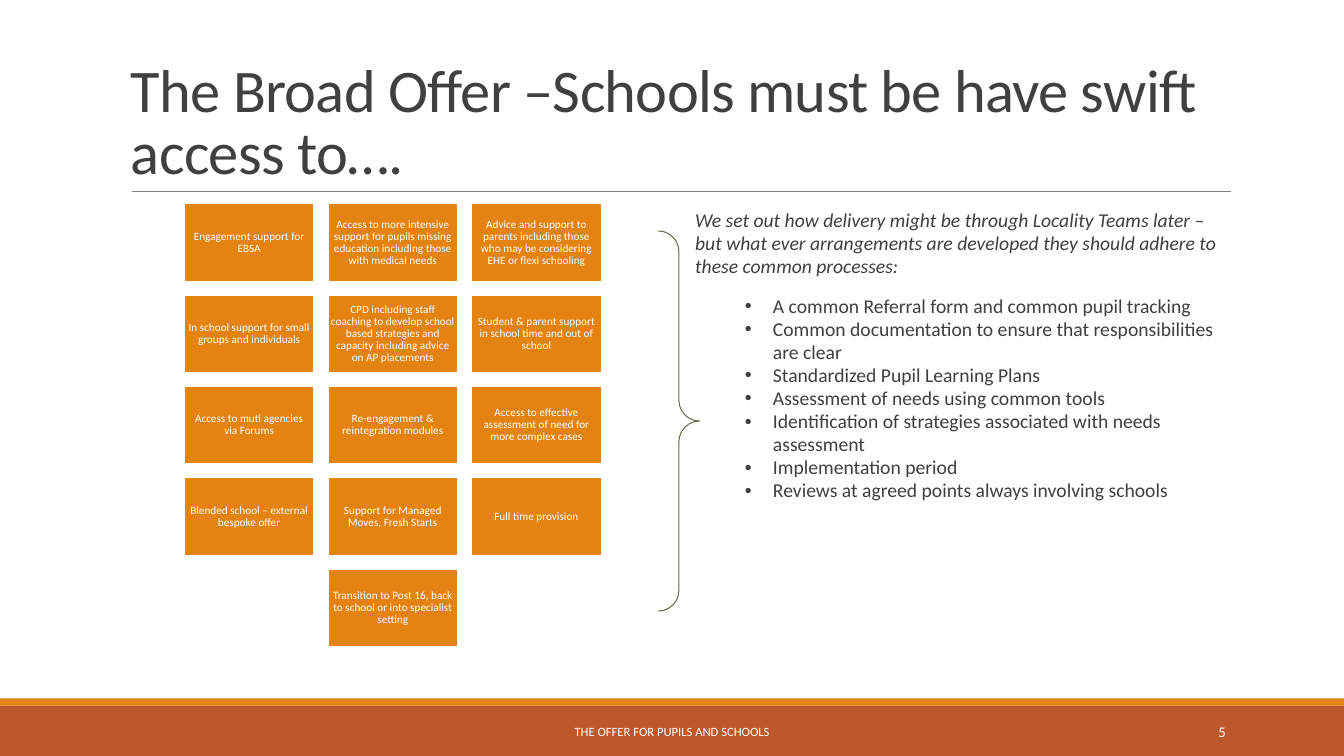
import pptx
import pptx.util
import pptx.dml.color
import pptx.enum.shapes
import pptx.enum.text
import pptx.oxml.xmlchemy

Cm, Pt = pptx.util.Cm, pptx.util.Pt
Kind = pptx.enum.shapes.MSO_SHAPE
Align = pptx.enum.text.PP_ALIGN
Anchor = pptx.enum.text.MSO_ANCHOR
Node = pptx.oxml.xmlchemy.OxmlElement


def paint(color, code):
    color.rgb = pptx.dml.color.RGBColor.from_string(code)


def write(frame, lines, code, anchor, inset, font, para):
    frame.word_wrap = True
    frame.vertical_anchor = anchor
    sides = ("margin_left", "margin_top", "margin_right", "margin_bottom")
    for side, gap in zip(sides, inset):
        setattr(frame, side, Cm(gap))
    for n, line in enumerate(lines):
        par = frame.paragraphs[0] if n == 0 else frame.add_paragraph()
        for key, val in para.items():
            setattr(par, key, val)
        run = par.add_run()
        run.text = line
        for key, val in {"name": "Calibri", **font}.items():
            setattr(run.font, key, val)
        paint(run.font.color, code)
    return frame.paragraphs


deck = pptx.Presentation()
deck.slide_width, deck.slide_height = Cm(33.87), Cm(19.05)
slide = deck.slides.add_slide(deck.slide_layouts[6])
shapes = slide.shapes

# Footer bars
for top, tall, code in ((17.78, 1.27, "BD582C"), (17.6, 0.18, "E48312")):
    bar = shapes.add_shape(Kind.RECTANGLE, 0, Cm(top), deck.slide_width, Cm(tall))
    bar.shadow.inherit = False
    bar.fill.solid()
    paint(bar.fill.fore_color, code)
    bar.line.fill.background()

# Title and rule
rule = shapes.add_connector(pptx.enum.shapes.MSO_CONNECTOR.STRAIGHT,
                            Cm(3.33), Cm(4.82), Cm(31.01), Cm(4.82))
rule.line.width = Pt(0.5)
paint(rule.line.color, "808080")
rule._element.spPr.append(Node("a:effectLst"))

title = shapes.add_textbox(Cm(3.05), Cm(0.8), Cm(27.94), Cm(4.03))
head = write(title.text_frame,
             ["The Broad Offer –Schools must be have swift access to…."],
             "404040", Anchor.BOTTOM, (0.25, 0.13, 0.25, 0.13),
             {"size": Pt(43.2)}, {"line_spacing": 0.85})
head[0].runs[0]._r.get_or_add_rPr().set("spc", "-50")

# Grid of offers, a short last row is centred
offers = [
    "Engagement support for EBSA",
    "Access to more intensive support for pupils missing education including those with medical needs",
    "Advice and support to parents including those who may be considering EHE or flexi schooling",
    "In school support for small groups and individuals",
    "CPD including staff coaching to develop school based strategies and capacity including advice on AP placements",
    "Student & parent support in school time and out of school",
    "Access to muti agencies via Forums",
    "Re-engagement & reintegration modules",
    "Access to effective assessment of need for more complex cases",
    "Blended school – external bespoke offer",
    "Support for Managed Moves, Fresh Starts",
    "Full time provision",
    "Transition to Post 16, back to school or into specialist setting",
]
cols = 3
for n, offer in enumerate(offers):
    row, col = divmod(n, cols)
    count = min(cols, len(offers) - row * cols)
    left = 4.64 + 3.62 * (col + (cols - count) / 2)
    box = shapes.add_shape(Kind.RECTANGLE, Cm(left), Cm(5.13 + 2.3 * row),
                           Cm(3.28), Cm(1.97))
    box.shadow.inherit = False
    box.fill.solid()
    paint(box.fill.fore_color, "E48312")
    box.line.width = Pt(1.25)
    paint(box.line.color, "FFFFFF")
    write(box.text_frame, [offer], "FFFFFF", Anchor.MIDDLE, [0.08] * 4,
          {"size": Pt(8)}, {"alignment": Align.CENTER, "line_spacing": 0.9})

# Common processes
body = shapes.add_textbox(Cm(17.27), Cm(5.13), Cm(13.72), Cm(11.18))
steps = [
    "We set out how delivery might be through Locality Teams later – but what ever arrangements are developed they should adhere to these common processes:",
    "A common Referral form and common pupil tracking",
    "Common documentation to ensure that responsibilities are clear",
    "Standardized Pupil Learning Plans",
    "Assessment of needs using common tools",
    "Identification of strategies associated with needs assessment",
    "Implementation period",
    "Reviews at agreed points always involving schools",
]
intro, *items = write(body.text_frame, steps, "3F3F3F", Anchor.TOP,
                      (0, 0.13, 0, 0.13), {"size": Pt(14)},
                      {"line_spacing": 0.98})
intro.space_after = Pt(12)
intro.runs[0].font.italic = True
intro._p.get_or_add_pPr().set("marL", str(Cm(0.25)))
for item in items:
    props = item._p.get_or_add_pPr()
    props.set("marL", str(Cm(2.21)))
    props.set("indent", str(Cm(-0.71)))
    for tag, key, val in (("a:buFont", "typeface", "Arial"),
                          ("a:buChar", "char", "•")):
        mark = Node(tag)
        mark.set(key, val)
        props.append(mark)

# Footer text and page number
for left, wide, text, size, align in (
        (10.24, 13.39, "THE OFFER FOR PUPILS AND SCHOOLS", 9, Align.CENTER),
        (27.51, 3.63, "5", 10.5, Align.RIGHT)):
    foot = shapes.add_textbox(Cm(left), Cm(17.93), Cm(wide), Cm(1.02))
    write(foot.text_frame, [text], "FFFFFF", Anchor.MIDDLE,
          (0.25, 0.13, 0.25, 0.13), {"size": Pt(size)}, {"alignment": align})

# Brace
brace = shapes.add_shape(Kind.RIGHT_BRACE, Cm(16.59), Cm(5.82), Cm(1.04), Cm(9.58))
brace.shadow.inherit = False
brace.fill.background()
brace.line.width = Pt(0.75)
paint(brace.line.color, "637052")
for n in range(2):
    brace.adjustments[n] = 0.5

deck.save("out.pptx")
